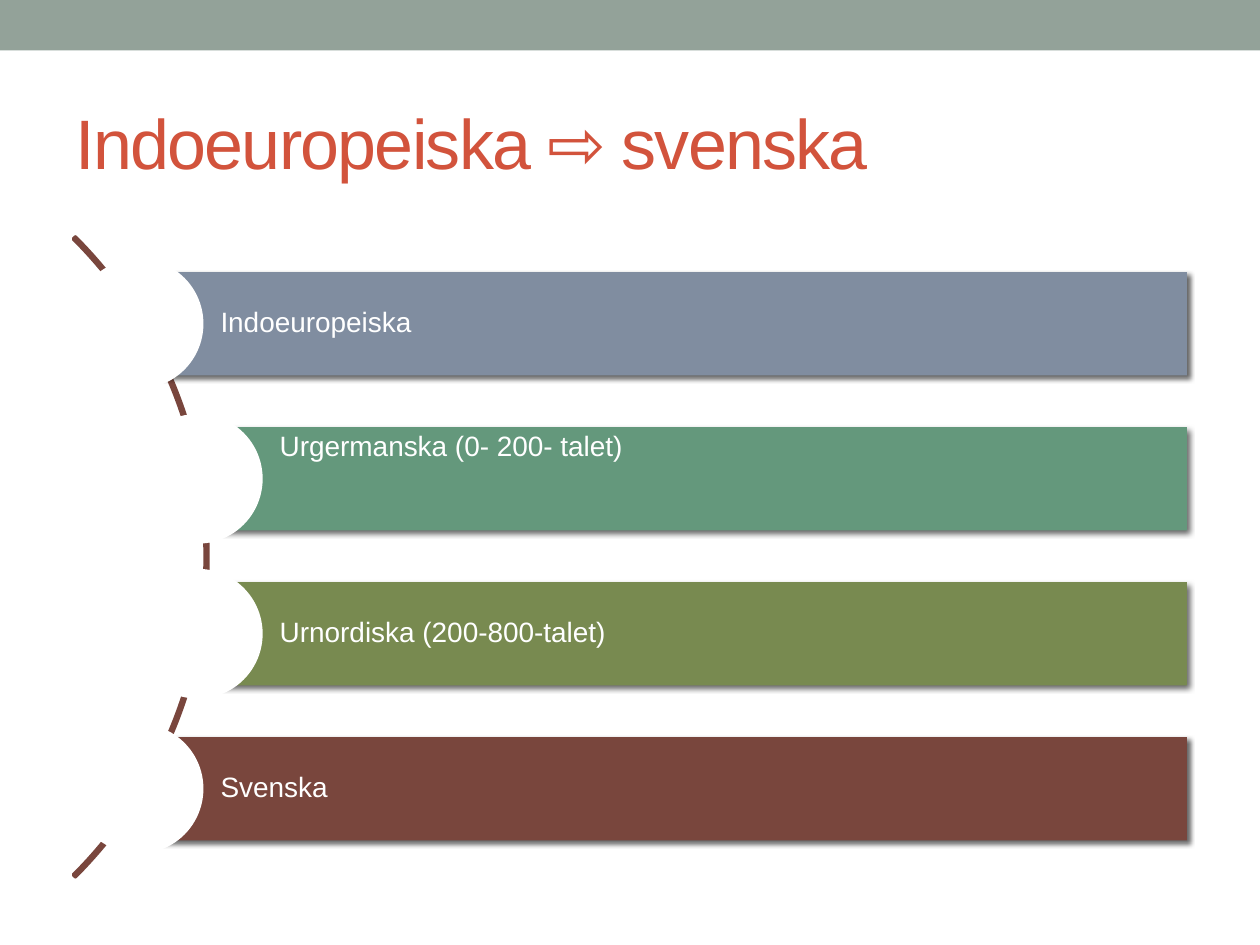
from lxml.etree import SubElement
from pptx import Presentation
from pptx.dml.color import RGBColor
from pptx.enum.shapes import MSO_SHAPE
from pptx.enum.text import MSO_ANCHOR, MSO_AUTO_SIZE, PP_ALIGN
from pptx.oxml.ns import qn
from pptx.util import Inches, Pt

TITLE = "Indoeuropeiska ⇨ svenska"
# text, left edge, colour, vertical anchor
STAGES = [
    ("Indoeuropeiska", 1.1, "808DA0", MSO_ANCHOR.MIDDLE),
    ("Urgermanska (0- 200- talet)", 1.57, "64987C", MSO_ANCHOR.TOP),
    ("Urnordiska (200-800-talet)", 1.57, "788A50", MSO_ANCHOR.MIDDLE),
    ("Svenska", 1.1, "79463D", MSO_ANCHOR.MIDDLE),
]
BAR_TOP, BAR_STEP, BAR_HEIGHT, BAR_RIGHT = 2.16, 1.23, 0.82, 9.42
CIRCLE = 1.03
ARC = (-5.53, 0.83, 7.18, 7.18)


def rgb(value):
    return RGBColor.from_string(value)


def add_shape(kind, left, top, width, height, fill=None):
    sp = s.shapes.add_shape(kind, *map(Inches, (left, top, width, height)))
    sp.shadow.inherit = False
    sp.line.fill.background()
    if fill:
        sp.fill.solid()
        sp.fill.fore_color.rgb = rgb(fill)
    else:
        sp.fill.background()
    return sp


def add_shadow(sp):
    effects = sp._element.spPr.find(qn("a:effectLst"))
    shadow = SubElement(effects, qn("a:outerShdw"), blurRad=str(Pt(3)),
                        dist=str(Pt(2)), dir="2700000", rotWithShape="0")
    color = SubElement(shadow, qn("a:srgbClr"), val="000000")
    SubElement(color, qn("a:alpha"), val="60000")


def set_text(sp, text, size, color, anchor=MSO_ANCHOR.MIDDLE, insets=None,
             line_spacing=None, spacing=None):
    tf = sp.text_frame
    tf.word_wrap = True
    tf.auto_size = MSO_AUTO_SIZE.NONE
    tf.vertical_anchor = anchor
    if insets:
        (tf.margin_left, tf.margin_top,
         tf.margin_right, tf.margin_bottom) = map(Inches, insets)
    p = tf.paragraphs[0]
    p.alignment = PP_ALIGN.LEFT
    p.line_spacing = line_spacing
    r = p.add_run()
    r.text = text
    r.font.size = Pt(size)
    r.font.name = "Arial"
    r.font.color.rgb = rgb(color)
    if spacing is not None:
        r.font._element.set("spc", str(spacing * 100))


prs = Presentation()
prs.slide_width, prs.slide_height = Inches(10), Inches(7.5)
s = prs.slides.add_slide(prs.slide_layouts[5])

add_shape(MSO_SHAPE.RECTANGLE, 0, 0, 10, 0.4, "93A299")

title = s.shapes.title
title.left, title.top, title.width, title.height = map(Inches, (0.5, 0.58, 9, 1.08))
set_text(title, TITLE, 40, "D2533C", spacing=-1)

arc = add_shape(MSO_SHAPE.BLOCK_ARC, *ARC)
for i, value in enumerate((189, 27, 0.003)):
    arc.adjustments[i] = value
arc.line.color.rgb = rgb("79463D")
arc.line.width = Pt(2.08)

for i, (text, left, color, anchor) in enumerate(STAGES):
    top = BAR_TOP + i * BAR_STEP
    bar = add_shape(MSO_SHAPE.RECTANGLE, left, top, BAR_RIGHT - left, BAR_HEIGHT, color)
    add_shadow(bar)
    set_text(bar, text, 16, "FFFFFF", anchor=anchor,
             insets=(0.65, 0.04, 0.04, 0.04), line_spacing=0.9)
    # each circle is centred on the left edge of its bar
    add_shape(MSO_SHAPE.OVAL, left - CIRCLE / 2, top + (BAR_HEIGHT - CIRCLE) / 2,
              CIRCLE, CIRCLE, "FFFFFF")

prs.save("out.pptx")
